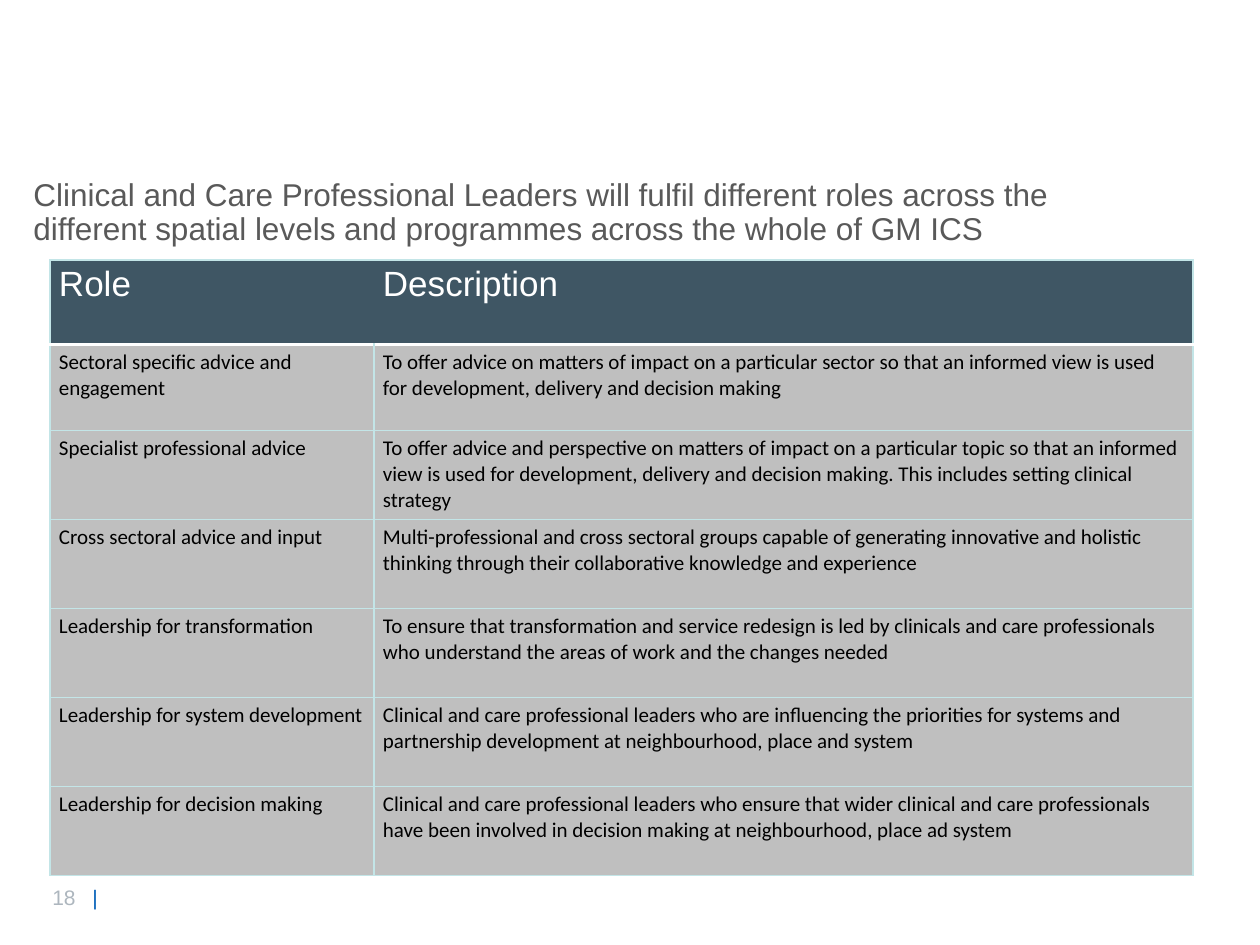
from lxml.etree import SubElement
from pptx import Presentation
from pptx.dml.color import RGBColor
from pptx.oxml.ns import qn
from pptx.util import Pt

PX = 914400 / 126  # EMU per pixel

WHITE = RGBColor(0xFF, 0xFF, 0xFF)
BLACK = RGBColor(0x00, 0x00, 0x00)
HEADING_GREY = RGBColor(0x59, 0x59, 0x59)
HEADER_SLATE = RGBColor(0x3F, 0x56, 0x64)
BODY_GREY = RGBColor(0xBF, 0xBF, 0xBF)
GRID_AQUA = RGBColor(0xC3, 0xE5, 0xE7)
NUMBER_GREY = RGBColor(0xAD, 0xB6, 0xBE)
BAR_BLUE = RGBColor(0x00, 0x5E, 0xB8)


def px(length):
    return round(length * PX)


def write(paragraph, text, *, size, color, font="Arial"):
    run = paragraph.add_run()
    run.text = text
    run.font.size = Pt(size)
    run.font.name = font
    run.font.bold = False
    run.font.color.rgb = color


def border(cell, side, color=None, width=0.75):
    line = SubElement(cell._tc.get_or_add_tcPr(), qn(f"a:ln{side}"), w=str(Pt(width)))
    if color is None:
        SubElement(line, qn("a:noFill"))
    else:
        fill = SubElement(line, qn("a:solidFill"))
        SubElement(fill, qn("a:srgbClr"), val=str(color))


presentation = Presentation()
presentation.slide_width = px(1260)
presentation.slide_height = px(945)
slide = presentation.slides.add_slide(presentation.slide_layouts[6])

# Heading
heading = slide.shapes.add_textbox(px(21), px(173), px(1086), px(87)).text_frame
heading.word_wrap = True
heading.paragraphs[0].line_spacing = 0.9
write(
    heading.paragraphs[0],
    "Clinical and Care Professional Leaders will fulfil different roles across the "
    "different spatial levels and programmes across the whole of GM ICS",
    size=18, color=HEADING_GREY,
)

# Table of roles
ROLES = [
    ("Role", "Description"),
    ("Sectoral specific advice and engagement",
     "To offer advice on matters of impact on a particular sector so that an informed "
     "view is used for development, delivery and decision making"),
    ("Specialist professional advice",
     "To offer advice and perspective on matters of impact on a particular topic so that "
     "an informed view is used for development, delivery and decision making. This "
     "includes setting clinical strategy"),
    ("Cross sectoral advice and input",
     "Multi-professional and cross sectoral groups capable of generating innovative and "
     "holistic thinking through their collaborative knowledge and experience"),
    ("Leadership for transformation",
     "To ensure that transformation and service redesign is led by clinicals and care "
     "professionals who understand the areas of work and the changes needed"),
    ("Leadership for system development",
     "Clinical and care professional leaders who are influencing the priorities for "
     "systems and partnership development at neighbourhood, place and system"),
    ("Leadership for decision making",
     "Clinical and care professional leaders who ensure that wider clinical and care "
     "professionals have been involved in decision making at neighbourhood, place ad system"),
]
COLUMN_WIDTHS = [324, 819]
ROW_HEIGHTS = [85, 86] + [89] * 5

roles = slide.shapes.add_table(
    len(ROLES), len(COLUMN_WIDTHS), px(50), px(260),
    px(sum(COLUMN_WIDTHS)), px(sum(ROW_HEIGHTS)),
).table
for column, width in zip(roles.columns, COLUMN_WIDTHS):
    column.width = px(width)

for r, (row, entries) in enumerate(zip(roles.rows, ROLES)):
    row.height = px(ROW_HEIGHTS[r])
    is_header = r == 0
    for c, (cell, text) in enumerate(zip(row.cells, entries)):
        cell.margin_left = cell.margin_right = px(9)
        cell.margin_top = cell.margin_bottom = px(5)
        # The header has no inner vertical line; a white rule runs below it
        border(cell, "L", None if is_header and c == 1 else GRID_AQUA)
        border(cell, "R", None if is_header and c == 0 else GRID_AQUA)
        border(cell, "T", *((WHITE, 2) if r == 1 else (GRID_AQUA,)))
        border(cell, "B", *((WHITE, 2) if is_header else (GRID_AQUA,)))
        cell.fill.solid()
        cell.fill.fore_color.rgb = HEADER_SLATE if is_header else BODY_GREY
        paragraph = cell.text_frame.paragraphs[0]
        if is_header:
            write(paragraph, text, size=20, color=WHITE)
        else:
            write(paragraph, text, size=12, color=BLACK, font="Calibri")

# Page number, with the bar at a tab stop
footer = slide.shapes.add_textbox(px(40), px(878), px(89), px(38)).text_frame
page_number = footer.paragraphs[0]
tabs = SubElement(page_number._p.get_or_add_pPr(), qn("a:tabLst"))
SubElement(tabs, qn("a:tab"), pos=str(px(40)), algn="l")
write(page_number, "18\t", size=12, color=NUMBER_GREY)
write(page_number, "|", size=12, color=BAR_BLUE)

presentation.save("out.pptx")
